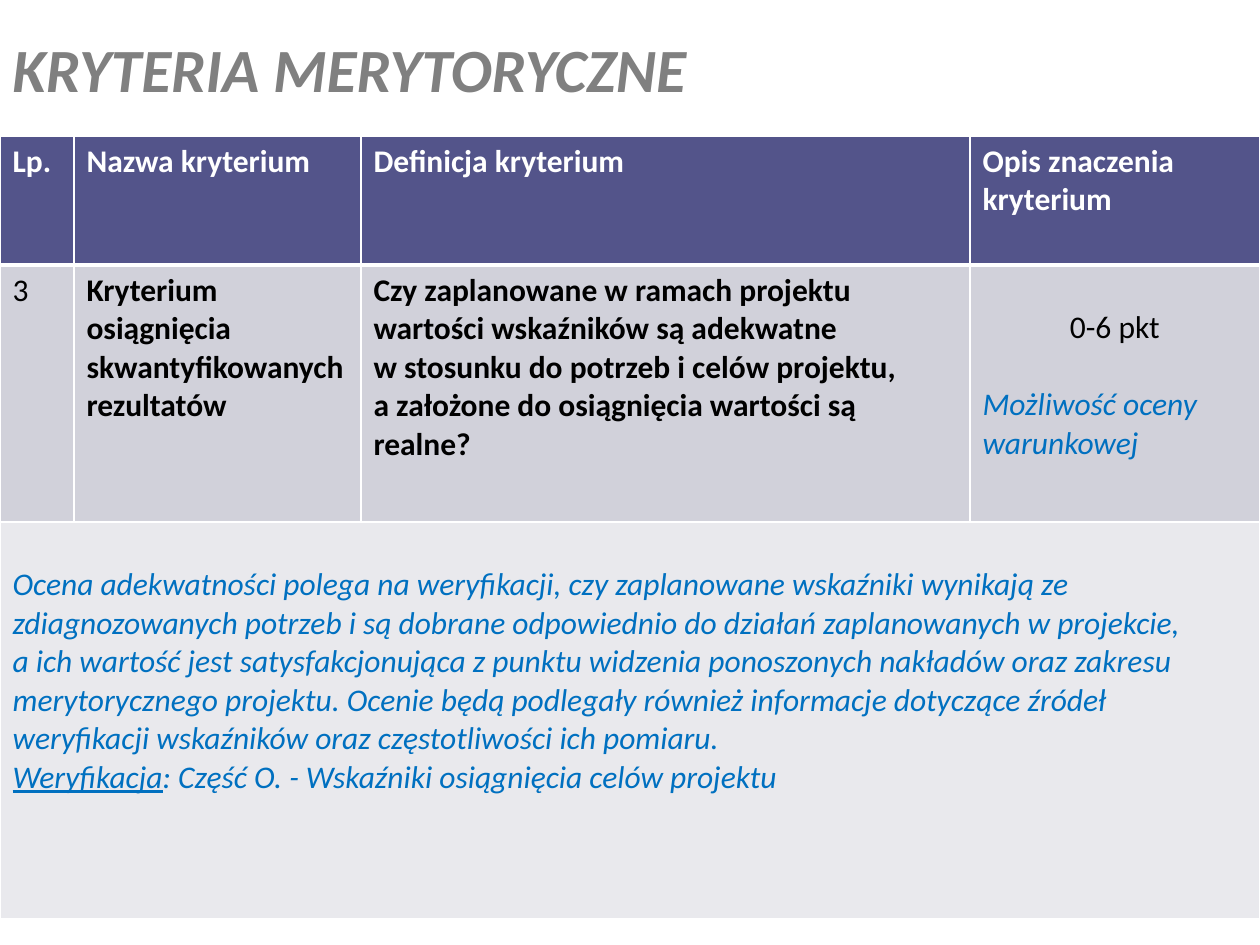
from lxml.etree import SubElement
from pptx import Presentation
from pptx.dml.color import RGBColor
from pptx.enum.text import MSO_ANCHOR, PP_ALIGN
from pptx.oxml.ns import qn
from pptx.util import Pt

EMU_PER_PX = 914400 / 126
FONT = "Calibri"
BODY_SIZE = 18
LINE_HEIGHT = 22  # points, one line of body text
CELL_TOP = 6
LINE_PX = 38
COLORS = {
    "title": "808080",
    "header": "53548A",
    "row": "D1D1DA",
    "note_row": "E9E9ED",
    "white": "FFFFFF",
    "black": "000000",
    "blue": "0070C0",
}
COLUMN_WIDTHS = [74, 287, 609, 290]
ROW_HEIGHTS = [129, 257, 397]
HEADERS = ["Lp.", "Nazwa kryterium", "Definicja kryterium", "Opis znaczenia kryterium"]
CRITERION = "Kryterium osiągnięcia skwantyfikowanych rezultatów"
DEFINITION = (
    "Czy zaplanowane w ramach projektu wartości wskaźników są adekwatne \n"
    "w stosunku do potrzeb i celów projektu, \n"
    "a założone do osiągnięcia wartości są realne?"
)
EXPLANATION = (
    "Ocena adekwatności polega na weryfikacji, czy zaplanowane wskaźniki wynikają ze "
    "zdiagnozowanych potrzeb i są dobrane odpowiednio do działań zaplanowanych w projekcie, \n"
    "a ich wartość jest satysfakcjonująca z punktu widzenia ponoszonych nakładów oraz zakresu "
    "merytorycznego projektu. Ocenie będą podlegały również informacje dotyczące źródeł "
    "weryfikacji wskaźników oraz częstotliwości ich pomiaru."
)


def px(length):
    return round(length * EMU_PER_PX)


def style_runs(paragraph, color, size=BODY_SIZE, bold=False, italic=False):
    for run in paragraph.runs:
        font = run.font
        font.name, font.size = FONT, Pt(size)
        font.bold, font.italic = bold, italic
        font.color.rgb = RGBColor.from_string(COLORS[color])


def set_borders(cell, bottom=1):
    """Draw white cell borders; lines must come before the fill in tcPr."""
    properties = cell._tc.get_or_add_tcPr()
    for side, width in (("L", 1), ("R", 1), ("T", 1), ("B", bottom)):
        line = SubElement(properties, qn(f"a:ln{side}"), w=str(Pt(width)))
        fill = SubElement(line, qn("a:solidFill"))
        SubElement(fill, qn("a:srgbClr"), val=COLORS["white"])


def format_cell(cell, fill, bottom=1):
    set_borders(cell, bottom)
    cell.fill.solid()
    cell.fill.fore_color.rgb = RGBColor.from_string(COLORS[fill])


def fill_cell(cell, text, color, bold=False):
    paragraph = cell.text_frame.paragraphs[0]
    paragraph.text = text
    style_runs(paragraph, color, bold=bold)


def fill_score(cell):
    cell.margin_top = px(CELL_TOP + LINE_PX)
    score = cell.text_frame.paragraphs[0]
    score.text = "0-6 pkt"
    score.alignment = PP_ALIGN.CENTER
    style_runs(score, "black")
    remark = cell.text_frame.add_paragraph()
    remark.text = "Możliwość oceny warunkowej"
    remark.space_before = Pt(LINE_HEIGHT)
    style_runs(remark, "blue", italic=True)


def fill_explanation(cell):
    cell.margin_top = px(CELL_TOP + LINE_PX)
    explanation = cell.text_frame.paragraphs[0]
    explanation.text = EXPLANATION
    style_runs(explanation, "blue", italic=True)
    verification = cell.text_frame.add_paragraph()
    verification.text = "Weryfikacja"
    verification.add_run().text = ": Część O. - Wskaźniki osiągnięcia celów projektu"
    style_runs(verification, "blue", italic=True)
    verification.runs[0].font.underline = True


def add_title(slide):
    title = slide.shapes.add_textbox(0, 0, px(1197), px(135))
    text_frame = title.text_frame
    text_frame.word_wrap = True
    text_frame.vertical_anchor = MSO_ANCHOR.MIDDLE
    text_frame.text = "KRYTERIA MERYTORYCZNE"
    style_runs(text_frame.paragraphs[0], "title", size=35.1, bold=True, italic=True)


def add_criteria_table(slide):
    table = slide.shapes.add_table(
        len(ROW_HEIGHTS), len(COLUMN_WIDTHS),
        0, px(136), px(sum(COLUMN_WIDTHS)), px(sum(ROW_HEIGHTS)),
    ).table
    for column, width in zip(table.columns, COLUMN_WIDTHS):
        column.width = px(width)
    for row, height, fill, bottom in zip(
        table.rows, ROW_HEIGHTS, ("header", "row", "note_row"), (3, 1, 1)
    ):
        row.height = px(height)
        for cell in row.cells:
            format_cell(cell, fill, bottom)

    for index, header in enumerate(HEADERS):
        fill_cell(table.cell(0, index), header, "white", bold=True)
    fill_cell(table.cell(1, 0), "3", "black")
    fill_cell(table.cell(1, 1), CRITERION, "black", bold=True)
    fill_cell(table.cell(1, 2), DEFINITION, "black", bold=True)
    fill_score(table.cell(1, 3))
    table.cell(2, 0).merge(table.cell(2, 3))
    fill_explanation(table.cell(2, 0))


def main():
    presentation = Presentation()
    presentation.slide_width, presentation.slide_height = px(1260), px(945)
    slide = presentation.slides.add_slide(presentation.slide_layouts[6])
    add_criteria_table(slide)
    add_title(slide)
    presentation.save("out.pptx")


if __name__ == "__main__":
    main()
